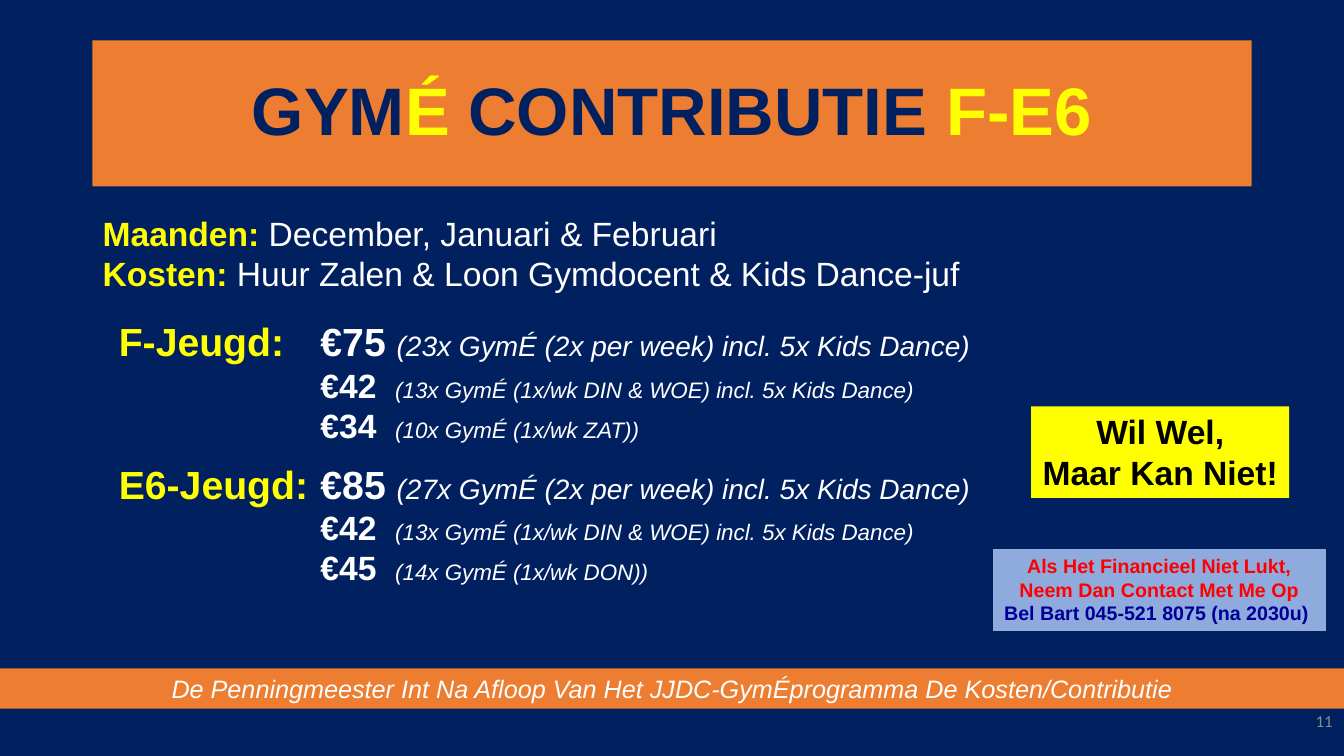
from dataclasses import dataclass
from typing import NamedTuple

from pptx import Presentation
from pptx.dml.color import RGBColor as RGB
from pptx.enum.shapes import MSO_SHAPE as Geom
from pptx.enum.text import MSO_ANCHOR as Anchor, MSO_AUTO_SIZE as Fit, PP_ALIGN as Align
from pptx.util import Pt


@dataclass(frozen=True)
class Theme:
    navy: str = "002060"
    orange: str = "ED7D31"
    yellow: str = "FFFF00"
    white: str = "FFFFFF"
    black: str = "000000"
    red: str = "FF0000"
    blue: str = "000099"
    pale: str = "8FAADC"
    grey: str = "8C8C8C"
    font: str = "Arial"
    plain: str = "Calibri"
    title: int = 48
    group: int = 28
    body: int = 24
    note: int = 20
    foot: int = 18
    small: int = 16
    help: int = 14
    page: int = 12


T = Theme()


class Run(NamedTuple):
    text: str
    color: str
    size: float
    bold: bool = True
    italic: bool = False
    font: str = T.font
    gap: float = 0


class Para(NamedTuple):
    runs: list[Run]
    before: float = 0
    indent: float = 0


class Price(NamedTuple):
    cost: str
    note: str


@dataclass(frozen=True)
class Box:
    left: float
    top: float
    width: float
    height: float
    paras: list[Para]
    fill: str = ""
    line: str = ""
    align: Align = Align.CENTER
    anchor: Anchor = Anchor.TOP
    wrap: bool = False


def write(frame, paras: list[Para], align: Align) -> None:
    for i, para in enumerate(paras):
        p = frame.paragraphs[0] if i == 0 else frame.add_paragraph()
        p.alignment = align
        p.space_before = Pt(para.before)
        if para.indent:
            props = p._p.get_or_add_pPr()
            props.set("marL", str(Pt(para.indent)))
            props.set("indent", "0")
        for item in para.runs:
            run = p.add_run()
            run.text = item.text
            font = run.font
            font.name, font.size = item.font, Pt(item.size)
            font.bold, font.italic = item.bold, item.italic
            font.color.rgb = RGB.from_string(item.color)
            if item.gap:
                run._r.get_or_add_rPr().set("spc", str(round(item.gap * 100)))


def draw(slide, box: Box) -> None:
    area = [Pt(n) for n in (box.left, box.top, box.width, box.height)]
    if box.fill:
        shape = slide.shapes.add_shape(Geom.RECTANGLE, *area)
        shape.shadow.inherit = False
        shape.fill.solid()
        shape.fill.fore_color.rgb = RGB.from_string(box.fill)
        if box.line:
            shape.line.color.rgb = RGB.from_string(box.line)
            shape.line.width = Pt(0.75)
        else:
            shape.line.fill.background()
    else:
        shape = slide.shapes.add_textbox(*area)
    frame = shape.text_frame
    frame.word_wrap = box.wrap
    frame.vertical_anchor = box.anchor
    write(frame, box.paras, box.align)


def head(slide) -> None:
    shape = slide.shapes.title
    shape.left, shape.top, shape.width, shape.height = Pt(66), Pt(28.8), Pt(828), Pt(104.4)
    shape.fill.solid()
    shape.fill.fore_color.rgb = RGB.from_string(T.orange)
    frame = shape.text_frame
    frame.auto_size = Fit.NONE
    frame.vertical_anchor = Anchor.MIDDLE
    parts = [("GYM", T.navy), ("É", T.yellow), (" CONTRIBUTIE ", T.navy), ("F-E6", T.yellow)]
    write(frame, [Para([Run(text, color, T.title) for text, color in parts])], Align.CENTER)
    frame.paragraphs[0].line_spacing = 0.9


def fact(label: str, text: str) -> Para:
    return Para([Run(label, T.yellow, T.body), Run(" " + text, T.white, T.body, False)])


def group(name: str, full: Price, parts: list[Price], before: float = 0) -> list[Para]:
    """Full price beside the group name, part prices indented below it."""
    rows = [Para([
        Run(name + "\t", T.yellow, T.group),
        Run(full.cost + " ", T.white, T.group),
        Run(full.note, T.white, T.note, False, True),
    ], before)]
    for part in parts:
        rows.append(Para([
            Run(part.cost, T.white, T.body),
            Run(" ", T.white, T.body, gap=6.67),
            Run(part.note, T.white, T.small, False, True),
        ], indent=144))
    return rows


def lines(size: float, *items: tuple[str, str]) -> list[Para]:
    return [Para([Run(text, color, size)]) for text, color in items]


MID = Price("€42", "(13x GymÉ (1x/wk DIN & WOE) incl. 5x Kids Dance)")
PRICES = (
    group("F-Jeugd:", Price("€75", "(23x GymÉ (2x per week) incl. 5x Kids Dance)"),
          [MID, Price("€34", "(10x GymÉ (1x/wk ZAT))")])
    + group("E6-Jeugd:", Price("€85", "(27x GymÉ (2x per week) incl. 5x Kids Dance)"),
            [MID, Price("€45", "(14x GymÉ (1x/wk DON))")], 10.5)
)
FACTS = [
    fact("Maanden:", "December, Januari & Februari"),
    fact("Kosten:", "Huur Zalen & Loon Gymdocent & Kids Dance-juf"),
]
BAND = "De Penningmeester Int Na Afloop Van Het JJDC-GymÉprogramma De Kosten/Contributie"
BOXES = [
    Box(743, 500.4, 216, 28.8, [Para([Run("11", T.grey, T.page, False, font=T.plain)])],
        align=Align.RIGHT, anchor=Anchor.MIDDLE, wrap=True),
    Box(77.8, 223.2, 627.8, 288.7, PRICES, align=Align.LEFT, wrap=True),
    Box(66.2, 148.3, 632.9, 65.5, FACTS, align=Align.LEFT, wrap=True),
    Box(736.6, 290.2, 184.3, 65.5,
        lines(T.body, ("Wil Wel,", T.black), ("Maar Kan Niet!", T.black)), T.yellow),
    Box(709.6, 392.4, 236.9, 58.3,
        lines(T.help, ("Als Het Financieel Niet Lukt,", T.red),
              ("Neem Dan Contact Met Me Op", T.red),
              ("Bel Bart 045-521 8075 (na 2030u) ", T.blue)), T.pale, T.pale),
    Box(0, 477.4, 960, 28.8, [Para([Run(BAND, T.white, T.foot, False, True)])],
        T.orange, wrap=True),
]


def main() -> None:
    deck = Presentation()
    deck.slide_width, deck.slide_height = Pt(960), Pt(540)
    slide = deck.slides.add_slide(deck.slide_layouts[5])
    back = slide.background.fill
    back.solid()
    back.fore_color.rgb = RGB.from_string(T.navy)
    head(slide)
    for box in BOXES:
        draw(slide, box)
    deck.save("out.pptx")


if __name__ == "__main__":
    main()
